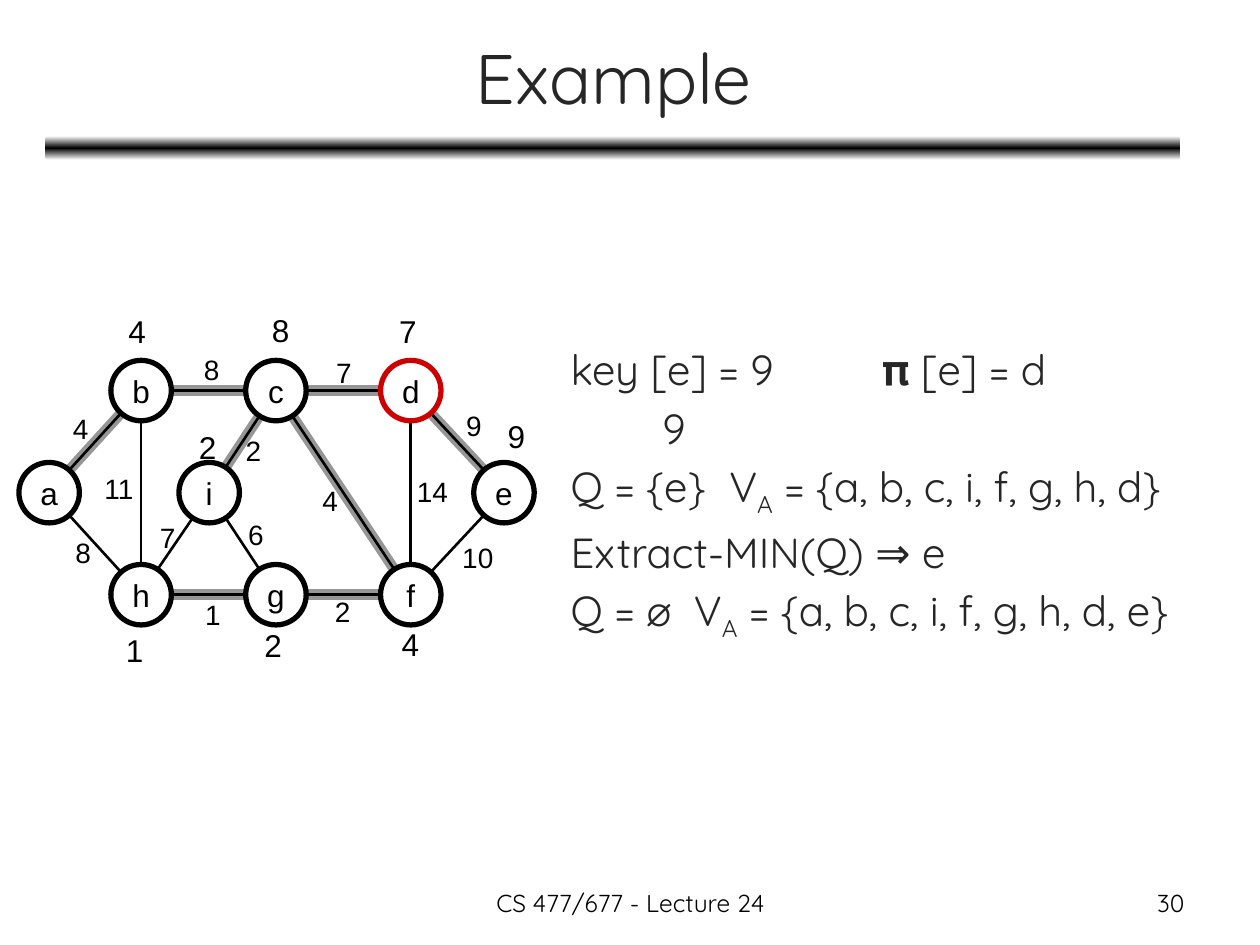
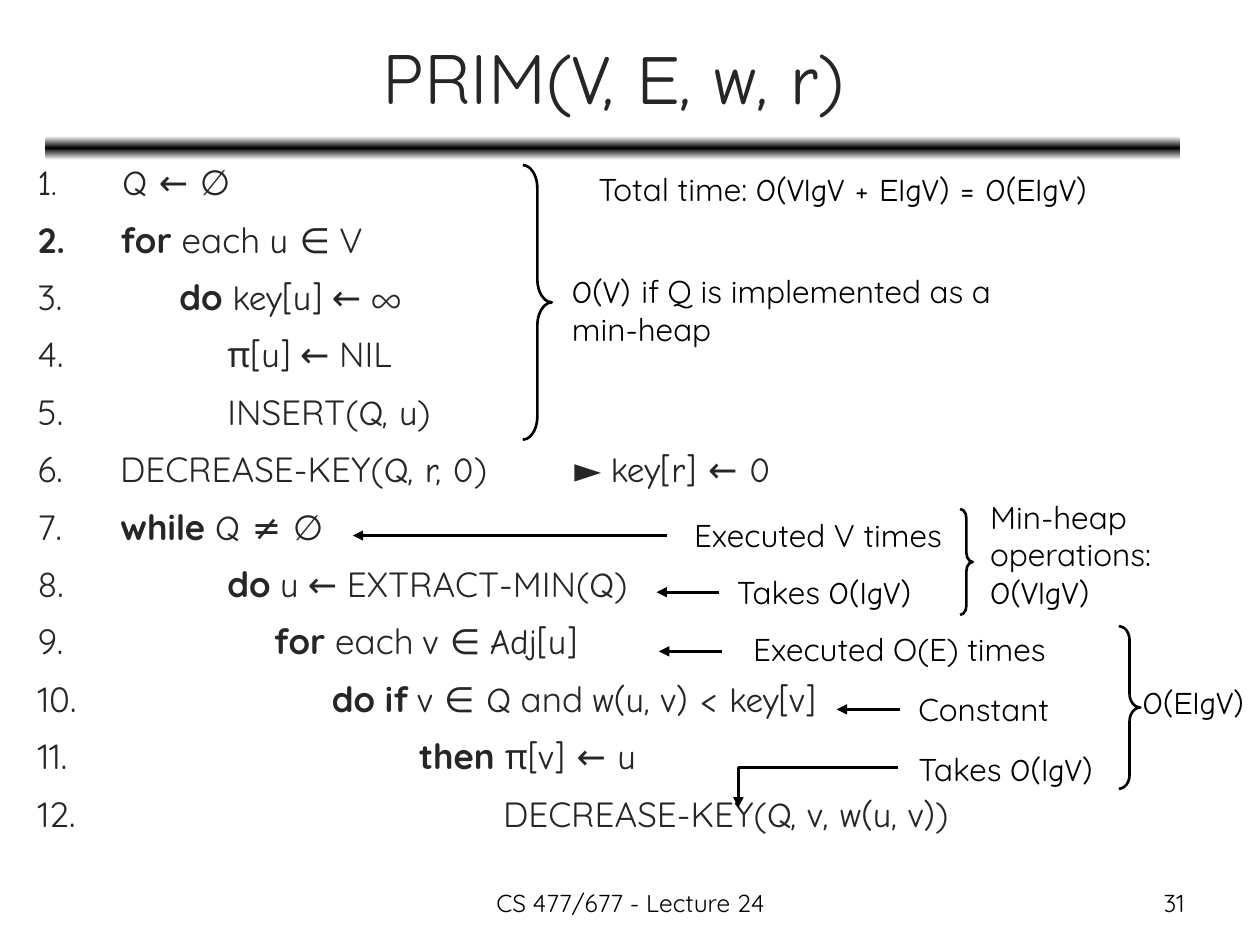
from copy import deepcopy
from math import hypot

from lxml import etree
from pptx import Presentation
from pptx.dml.color import RGBColor
from pptx.enum.shapes import MSO_CONNECTOR, MSO_SHAPE
from pptx.enum.text import MSO_ANCHOR, PP_ALIGN
from pptx.oxml.ns import qn
from pptx.util import Pt

PX = 9144
STRAIGHT = MSO_CONNECTOR.STRAIGHT
OVAL, BRACE, BAND = MSO_SHAPE.OVAL, MSO_SHAPE.RIGHT_BRACE, MSO_SHAPE.ROUNDED_RECTANGLE
LEFT, CENTER, RIGHT = PP_ALIGN.LEFT, PP_ALIGN.CENTER, PP_ALIGN.RIGHT
TOP, MIDDLE = MSO_ANCHOR.TOP, MSO_ANCHOR.MIDDLE
BLACK, INK, GRAY, RED, WHITE = "000000", "262626", "969696", "CC0000", "FFFFFF"
SANS, COMIC, ARIAL = "Quicksand", "Comic Neue", "Arial"
color = RGBColor.from_string


def add_text(slide, box, lines, size, ink=BLACK, align=LEFT, anchor=TOP, wrap=True):
    frame = slide.shapes.add_textbox(*[n * PX for n in box]).text_frame
    frame.word_wrap = wrap
    frame.vertical_anchor = anchor
    for number, line in enumerate(lines):
        paragraph = frame.add_paragraph() if number else frame.paragraphs[0]
        paragraph.alignment = align
        for words, face, *bold in line:
            run = paragraph.add_run()
            run.text = words
            run.font.name = face
            run.font.size = Pt(size)
            run.font.bold = bool(bold)
            run.font.color.rgb = color(ink)
    return frame


def add_line(slide, start, end, ink=BLACK, width=1.5, arrow=False):
    line = slide.shapes.add_connector(STRAIGHT, *[round(n) * PX for n in (*start, *end)])
    line.line.color.rgb = color(ink)
    line.line.width = Pt(width)
    if arrow:
        etree.SubElement(line.line._get_or_add_ln(), qn("a:tailEnd"), type="triangle")
    etree.SubElement(line._element.spPr, qn("a:effectLst"))


prs = Presentation()
prs.slide_width, prs.slide_height = 1000 * PX, 750 * PX

titles = [
    [("Example", SANS)],
    [("PRIM(", SANS), ("V, E, w, r", COMIC), (")", SANS)],
]
for page, title in enumerate(titles, 30):
    slide = prs.slides.add_slide(prs.slide_layouts[6])
    band = slide.shapes.add_shape(BAND, 36 * PX, 108 * PX, 901 * PX, 19 * PX)
    band.shadow.inherit = False
    band.line.fill.background()
    band.fill.gradient()
    band.fill.gradient_angle = 90
    stop_list = band._element.spPr.find(qn("a:gradFill")).find(qn("a:gsLst"))
    stop_list.append(deepcopy(stop_list[-1]))
    for stop, place, shade in zip(band.fill.gradient_stops, (0, 0.5, 1), (WHITE, BLACK, WHITE)):
        stop.position = place
        stop.color.rgb = color(shade)
    add_text(slide, (37, 11, 900, 99), [title], 40, INK, CENTER, MIDDLE)
    add_text(slide, (342, 700, 317, 35), [[("CS 477/677 - Lecture 24", SANS)]], 14, align=CENTER)
    add_text(slide, (717, 700, 233, 35), [[(str(page), SANS)]], 14, align=RIGHT)

example, prim = prs.slides

vertices = {
    "a": (39, 391), "b": (112, 310), "c": (219, 310), "d": (326, 310), "e": (400, 391),
    "f": (326, 472), "g": (219, 472), "h": (112, 472), "i": (166, 391),
}
tree_edges = ["ab", "bc", "cd", "de", "ci", "cf", "hg", "gf"]
other_edges = ["ah", "bh", "hi", "ig", "df", "fe"]
radius = 24

segments = {}
for edge in tree_edges + other_edges:
    (x1, y1), (x2, y2) = vertices[edge[0]], vertices[edge[1]]
    length = hypot(x2 - x1, y2 - y1)
    dx, dy = radius * (x2 - x1) / length, radius * (y2 - y1) / length
    segments[edge] = (x1 + dx, y1 + dy), (x2 - dx, y2 - dy)
for edge in tree_edges:
    add_line(example, *segments[edge], GRAY, 6)
for segment in segments.values():
    add_line(example, *segment)

for name, (x, y) in vertices.items():
    vertex = example.shapes.add_shape(
        OVAL, (x - radius) * PX, (y - radius) * PX, 2 * radius * PX, 2 * radius * PX)
    vertex.shadow.inherit = False
    vertex.fill.background()
    vertex.line.color.rgb = color(RED if name == "d" else BLACK)
    vertex.line.width = Pt(3)
    vertex.text_frame.word_wrap = False
    vertex.text_frame.vertical_anchor = MIDDLE
    paragraph = vertex.text_frame.paragraphs[0]
    paragraph.alignment = CENTER
    run = paragraph.add_run()
    run.text = name
    run.font.name = ARIAL
    run.font.size = Pt(18)
    run.font.color.rgb = color(BLACK)

weights = [
    ("4", 48, 322), ("8", 152, 275), ("7", 257, 277), ("8", 50, 420), ("11", 73, 369),
    ("1", 153, 469), ("2", 256, 467), ("7", 117, 408), ("2", 185, 339), ("4", 246, 379),
    ("14", 321, 372), ("9", 360, 319), ("10", 357, 424), ("6", 187, 406),
]
for weight, x, y in weights:
    add_text(example, (x, y, 19 + 13 * len(weight), 37), [[(weight, ARIAL)]], 16, wrap=False)

keys = [
    ("4", 92, 243), ("8", 206, 242), ("7", 307, 243), ("9", 393, 326),
    ("1", 90, 496), ("2", 200, 492), ("4", 309, 491), ("2", 148, 335),
]
for key, x, y in keys:
    add_text(example, (x, y, 34, 40), [[(key, ARIAL)]], 18, wrap=False)

steps = [
    (0, 247, [("key [e] = 9\t𝛑 [e] = d", SANS)]),
    (73, 0, [("9", SANS)]),
    (0, 126, [("Q = {e}\tV", SANS), ("A", SANS), (" = {a, b, c, i, f, g, h, d}", SANS)]),
    (0, 0, [("Extract-MIN(Q) ⇒ e", SANS)]),
    (0, 98, [("Q = ∅\tV", SANS), ("A", SANS), (" = {a, b, c, i, f, g, h, d, e}", SANS)]),
]
frame = add_text(example, (443, 268, 557, 268), [runs for *_, runs in steps], 24, INK)
for paragraph, (margin, tab, _) in zip(frame.paragraphs, steps):
    paragraph.space_before = Pt(4.6)
    properties = paragraph._p.get_or_add_pPr()
    properties.set("marL", str(margin * PX))
    if tab:
        tabs = etree.SubElement(properties, qn("a:tabLst"))
        etree.SubElement(tabs, qn("a:tab"), pos=str(tab * PX), algn="l")
    for run in paragraph.runs:
        if run.text == "A":
            run.font._element.set("baseline", "-25000")

code = [
    (58, [(" Q ← ∅", COMIC)]),
    (58, [(" for ", SANS, True), ("each ", SANS), ("u ", COMIC), ("∈ V", SANS)]),
    (105, [(" ", SANS), ("do ", SANS, True), ("key[u]", COMIC), (" ← ∞", SANS)]),
    (143, [(" ", SANS), ("π[u]", COMIC), (" ← NIL", SANS)]),
    (143, [(" INSERT(", SANS), ("Q, u", COMIC), (")", SANS)]),
    (58, [(" DECREASE-KEY(", SANS), ("Q, r, 0", COMIC), (")", SANS)]),
    (58, [(" ", SANS), ("while ", SANS, True), ("Q ≠ ∅", COMIC)]),
    (143, [(" ", SANS), ("do ", SANS, True), ("u", COMIC), (" ← EXTRACT-MIN(", SANS),
           ("Q", COMIC), (")", SANS)]),
    (180, [(" ", SANS), ("for ", SANS, True), ("each ", SANS), ("v ", COMIC), ("∈ ", SANS),
           ("Adj[u]", COMIC)]),
    (226, [(" ", SANS), ("do if ", SANS, True), ("v ∈ Q", COMIC), (" and ", SANS),
           ("w(u, v) < key[v]", COMIC)]),
    (295, [(" ", SANS), ("then ", SANS, True), ("π[v] ← u", COMIC)]),
    (362, [(" DECREASE-KEY(", SANS), ("Q, v, w(u, v)", COMIC), (")", SANS)]),
]
frame = add_text(prim, (20, 116, 927, 612), [runs for _, runs in code], 20, INK)
for paragraph, (margin, _) in zip(frame.paragraphs, code):
    paragraph.line_spacing = 1.2
    paragraph.space_before = Pt(4)
    properties = paragraph._p.get_or_add_pPr()
    properties.set("marL", str(margin * PX))
    properties.set("indent", str(-margin * PX))
    etree.SubElement(properties, qn("a:buFont"), typeface="+mj-lt")
    etree.SubElement(properties, qn("a:buAutoNum"), type="arabicPeriod")
add_text(prim, (446, 350, 220, 40), [[("► ", SANS), ("key[r] ← 0", COMIC)]], 20, INK)

takes_log = [[("Takes ", SANS), ("O(lgV)", COMIC)]]
costs = [
    ((465, 130, 474, 40), [[("Total time: ", SANS), ("O(VlgV + ElgV) = O(ElgV)", COMIC)]]),
    ((444, 211, 369, 70), [[("O(V) ", COMIC), ("if Q is implemented as a min-heap", SANS)]]),
    ((541, 405, 235, 40), [[("Executed V times", SANS)]]),
    ((575, 450, 193, 40), takes_log),
    ((776, 390, 180, 100), [[("Min-heap operations:", SANS)], [("O(VlgV)", COMIC)]]),
    ((588, 495, 276, 40), [[("Executed O(E) times", SANS)]]),
    ((719, 543, 139, 40), [[("Constant", SANS)]]),
    ((719, 590, 173, 40), takes_log),
]
for box, lines in costs:
    add_text(prim, box, lines, 18)
add_text(prim, (897, 537, 103, 40), [[("O(ElgV)", COMIC)]], 18, wrap=False)

braces = [
    ((415, 131, 23, 218), 0.81),
    ((762, 404, 10, 84), 0.72),
    ((888, 497, 17, 129), 0.64),
]
for box, curve in braces:
    brace = prim.shapes.add_shape(BRACE, *[n * PX for n in box])
    brace.shadow.inherit = False
    brace.fill.background()
    brace.line.color.rgb = color(BLACK)
    brace.line.width = Pt(1.5)
    brace.adjustments[0] = curve

for start, tip, y in [(529, 280, 425), (571, 521, 470), (573, 523, 517), (714, 664, 563)]:
    add_line(prim, (start, y), (tip, y), arrow=True)
add_line(prim, (586, 609), (713, 609))
add_line(prim, (586, 609), (586, 641), arrow=True)

prs.save("out.pptx")
